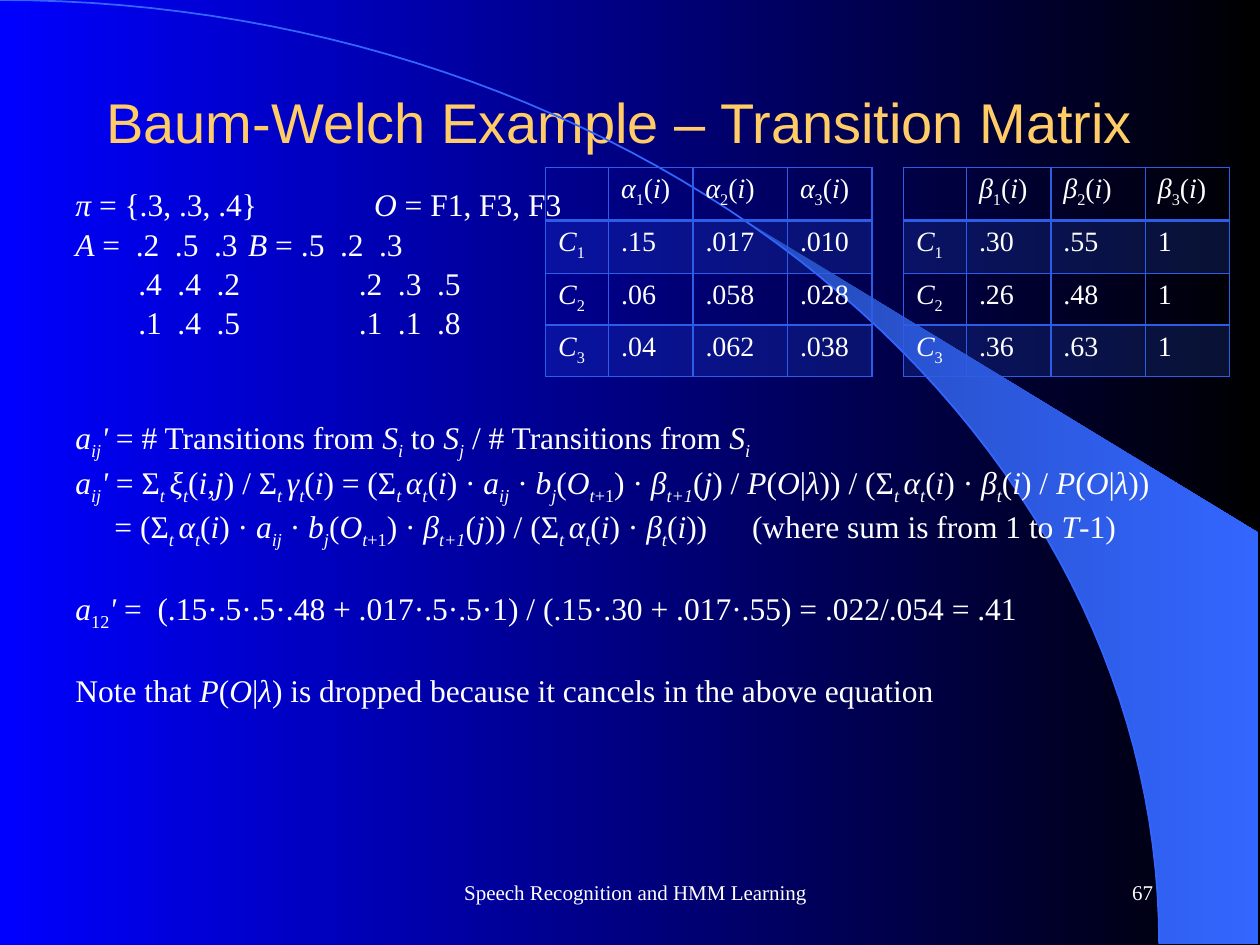
import math
import pptx
import pptx.util
import pptx.dml.color
import pptx.enum.text
from pptx.oxml import parse_xml
from pptx.oxml.ns import nsdecls

Inches, Pt = pptx.util.Inches, pptx.util.Pt
ALIGN, ANCHOR = pptx.enum.text.PP_ALIGN, pptx.enum.text.MSO_ANCHOR
HUE = {name: pptx.dml.color.RGBColor.from_string(code) for name, code in {
    "blue": "0000FF", "black": "000000", "deep": "2449B6", "arc": "3366FF",
    "gold": "FFCC66", "white": "FFFFFF", "grid": "2D5CE7"}.items()}
SERIF = "Times New Roman"


def write(par, text, size, face=SERIF, hue="white"):
    """Add text to a paragraph: * toggles italic, ~ toggles subscript."""
    sub = False
    for n, part in enumerate(text.split("*")):
        for m, bit in enumerate(part.split("~")):
            sub ^= m > 0
            if not bit:
                continue
            run = par.add_run()
            run.text = bit
            for key, val in {"name": face, "size": Pt(size), "bold": False,
                             "italic": n % 2 == 1}.items():
                setattr(run.font, key, val)
            run.font.color.rgb = HUE[hue]
            if sub:
                run._r.get_or_add_rPr().set("baseline", "-25000")


def blend(fill, left, right):
    """Fill with a gradient running from left to right."""
    fill.gradient()
    fill.gradient_angle = 0
    for stop, hue in zip(fill.gradient_stops, (left, right)):
        stop.color.rgb = HUE[hue]


deck = pptx.Presentation()
deck.slide_width, deck.slide_height = Inches(10), Inches(7.5)
slide = deck.slides.add_slide(deck.slide_layouts[5])
shapes = slide.shapes

# Background: gradient, wedge of light and quarter ellipse
blend(slide.background.fill, "blue", "black")
wide, high = 9.2, 7.49
start = math.asin(5.89 / wide)
curves = {}
for name, low in {"wedge": start, "arc": 0}.items():
    turns = [low + (math.pi / 2 - low) * n / 60 for n in range(61)]
    curves[name] = [(wide * math.sin(t), high * (1 - math.cos(t))) for t in turns]
curves["wedge"] += [(9.99, high), (9.99, 4.23)]
for name, points in curves.items():
    spots = [(Inches(x), Inches(y)) for x, y in points]
    pen = shapes.build_freeform(*spots[0])
    pen.add_line_segments(spots[1:], close=name == "wedge")
    form = pen.convert_to_shape()
    form.shadow.inherit = False
    if name == "wedge":
        blend(form.fill, "deep", "arc")
        form.line.fill.background()
    else:
        form.fill.background()
        form.line.color.rgb = HUE["arc"]
        form.line.width = Pt(1)

# Title
title = shapes.title
for key, val in {"left": 0.67, "top": 0.5, "width": 8.5, "height": 0.92}.items():
    setattr(title, key, Inches(val))
title.text_frame.vertical_anchor = ANCHOR.MIDDLE
head = title.text_frame.paragraphs[0]
head.alignment = ALIGN.CENTER
write(head, "Baum-Welch Example – Transition Matrix", 32, "Arial", "gold")

# Body: text, space before in points, tab stops in inches
top = "Σ*~t ~α~t~*(*i*) · *a~ij~* · *b~j~*(*O~t*+1~) · *β~t+1~*(*j*)"
base = "Σ*~t ~α~t~*(*i*) · *β~t~*(*i*)"
prob = "*P*(*O*|*λ*)"
step = 0.31
cols = [x + step * n for x in (0.5, 2.25) for n in range(3)]
lines = [
    ("*π* = {.3, .3, .4}\t*O* = F1, F3, F3", 0.9, [2.37]),
    ("*A* =\t.2\t.5\t.3\t*B* =\t.5\t.2\t.3", 0.9,
     [0.48, 0.48 + step, 0.48 + 2 * step, 1.37, 1.79, 1.79 + step, 1.79 + 2 * step]),
    ("\t.4\t.4\t.2\t.2\t.3\t.5", 0.9, cols),
    ("\t.1\t.4\t.5\t.1\t.1\t.8", 0.9, cols),
    ("*a~ij~'* = # Transitions from *S~i~* to *S~j~* / # Transitions from *S~i~*", 44, []),
    (f"*a~ij~'* = Σ*~t ~ξ~t~*(*i*,*j*) / Σ*~t ~γ~t~*(*i*) = "
     f"({top} / {prob}) / ({base} / {prob})", 0.9, []),
    (f"\t= ({top}) / ({base})\t(where sum is from 1 to *T*-1)", 0.9, [step, 5.37]),
    ("*a*~12~*'* =  (.15·.5·.5·.48 + .017·.5·.5·1) / (.15·.30 + .017·.55)"
     " = .022/.054 = .41", 22.4, []),
    (f"Note that {prob} is dropped because it cancels in the above equation", 22.4, []),
]
body = shapes.add_textbox(Inches(0.5), Inches(1.42), Inches(9.25), Inches(5.25)).text_frame
body.word_wrap = True
for n, (text, gap, stops) in enumerate(lines):
    par = body.add_paragraph() if n else body.paragraphs[0]
    par.space_before = Pt(gap)
    if stops:
        tabs = "".join(f'<a:tab pos="{Inches(x)}" algn="l"/>' for x in stops)
        par._p.get_or_add_pPr().append(
            parse_xml(f'<a:tabLst {nsdecls("a")}>{tabs}</a:tabLst>'))
    write(par, text, 18)

# Footer and page number
for text, left, width, side in (
        ("Speech Recognition and HMM Learning", 3.17, 3.75, ALIGN.CENTER),
        ("67", 7.17, 2.08, ALIGN.RIGHT)):
    foot = shapes.add_textbox(Inches(left), Inches(6.83), Inches(width), Inches(0.5)).text_frame
    foot.word_wrap = True
    foot.vertical_anchor = ANCHOR.MIDDLE
    foot.paragraphs[0].alignment = side
    write(foot.paragraphs[0], text, 12)

# Forward and backward tables
sets = [
    ("α", 4.33, [[".15", ".017", ".010"], [".06", ".058", ".028"], [".04", ".062", ".038"]]),
    ("β", 7.17, [[".30", ".55", "1"], [".26", ".48", "1"], [".36", ".63", "1"]]),
]
for sign, left, data in sets:
    rows = [[""] + [f"*{sign}*~{n}~(*i*)" for n in (1, 2, 3)]]
    rows += [[f"*C*~{n}~"] + vals for n, vals in enumerate(data, 1)]
    grid = shapes.add_table(4, 4, Inches(left), Inches(1.33), Inches(2.59), Inches(1.66)).table
    grid.first_row = grid.horz_banding = False
    for col, width in zip(grid.columns, (0.5, 0.67, 0.75, 0.67)):
        col.width = Inches(width)
    for row, height in zip(grid.rows, (0.42, 0.42, 0.41, 0.41)):
        row.height = Inches(height)
    for r, vals in enumerate(rows):
        for c, text in enumerate(vals):
            cell = grid.cell(r, c)
            write(cell.text_frame.paragraphs[0], text, 16)
            props = cell._tc.get_or_add_tcPr()
            if r % 2:
                cell.fill.solid()
                cell.fill.fore_color.rgb = HUE["grid"]
                props.find(".//{*}srgbClr").append(
                    parse_xml(f'<a:alpha {nsdecls("a")} val="20000"/>'))
            else:
                cell.fill.background()
            for n, edge in enumerate("LRTB"):
                thick = 2 if (r, edge) in ((0, "B"), (1, "T")) else 1
                props.insert(n, parse_xml(
                    f'<a:ln{edge} {nsdecls("a")} w="{Pt(thick)}"><a:solidFill>'
                    f'<a:srgbClr val="{HUE["grid"]}"/></a:solidFill></a:ln{edge}>'))

deck.save("out.pptx")
